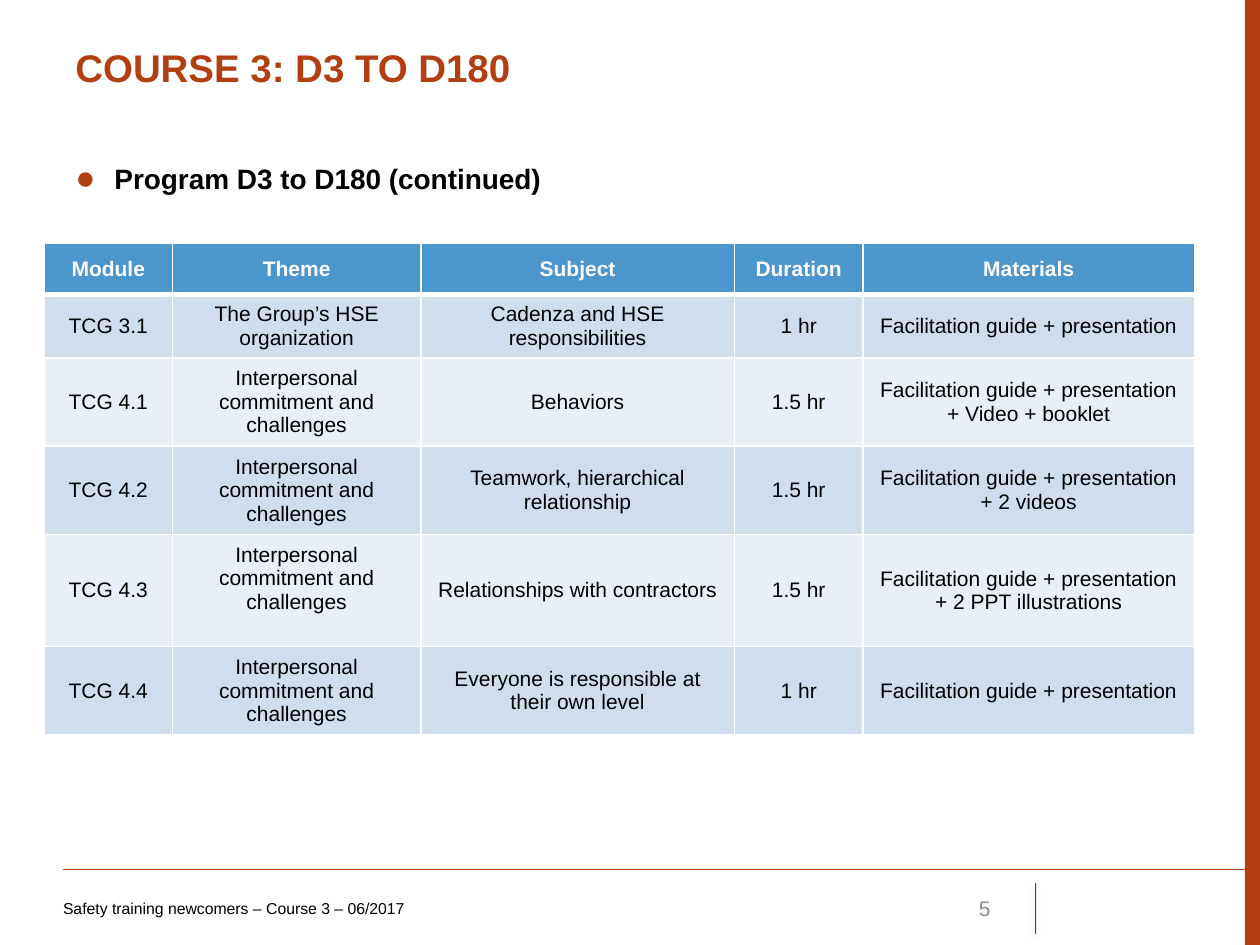
from pptx import Presentation
from pptx.dml.color import RGBColor
from pptx.enum.shapes import MSO_CONNECTOR, MSO_SHAPE
from pptx.enum.text import MSO_ANCHOR, PP_ALIGN
from pptx.oxml import parse_xml
from pptx.oxml.ns import nsdecls
from pptx.util import Inches, Pt

LEFT, CENTER, RIGHT = PP_ALIGN.LEFT, PP_ALIGN.CENTER, PP_ALIGN.RIGHT
TOP, MIDDLE = MSO_ANCHOR.TOP, MSO_ANCHOR.MIDDLE
NS = nsdecls("a")

# Content
TITLE = "COURSE 3: D3 TO D180"
HEADING = "Program D3 to D180 (continued)"
FOOTER = "Safety training newcomers – Course 3 – 06/2017"
PAGE = "5"
THEME4 = "Interpersonal commitment and challenges"
GUIDE = "Facilitation guide + presentation"
ROWS = [
    ("Module", "Theme", "Subject", "Duration", "Materials"),
    ("TCG 3.1", "The Group’s HSE organization",
     "Cadenza and HSE responsibilities", "1 hr", GUIDE),
    ("TCG 4.1", THEME4, "Behaviors", "1.5 hr", GUIDE + " + Video + booklet"),
    ("TCG 4.2", THEME4, "Teamwork, hierarchical relationship", "1.5 hr",
     GUIDE + " + 2 videos"),
    ("TCG 4.3", THEME4, "Relationships with contractors", "1.5 hr",
     GUIDE + " + 2 PPT illustrations"),
    ("TCG 4.4", THEME4, "Everyone is responsible at their own level", "1 hr",
     GUIDE),
]
WIDTHS = [1.02, 1.97, 2.49, 1.02, 2.63]
HEIGHTS = [0.41, 0.47, 0.66, 0.66, 0.85, 0.66]
RAISED = (4, 1)  # cell whose text sits one line higher

THEME = {
    "font": "Arial", "accent": "B23F12", "text": "000000", "white": "FFFFFF",
    "muted": "8C8C8C", "head": "4A96CD", "bands": ("E9EFF6", "D0DDED"),
    "title": 22, "heading": 16, "table": 12, "page": 12, "footer": 9,
}


def color(name):
    return RGBColor.from_string(THEME.get(name, name))


def write(frame, text, size, tint="text", bold=False, align=LEFT):
    """Put one formatted paragraph in a text frame."""
    frame.word_wrap = True
    para = frame.paragraphs[0]
    para.alignment = align
    run = para.add_run()
    run.text = text
    font = run.font
    font.name, font.size, font.bold = THEME["font"], Pt(THEME[size]), bold
    font.color.rgb = color(tint)
    return para


def add_text(slide, box, text, size, anchor=TOP, inset=0.1, **look):
    frame = slide.shapes.add_textbox(*map(Inches, box)).text_frame
    frame.vertical_anchor = anchor
    frame.margin_left = Inches(inset)
    return write(frame, text, size, **look)


def add_bullet(para):
    props = para._p.get_or_add_pPr()
    props.set("marL", str(Inches(0.31)))
    props.set("indent", str(Inches(-0.31)))
    for xml in (
        f'<a:buClr {NS}><a:srgbClr val="{THEME["accent"]}"/></a:buClr>',
        f'<a:buSzPct {NS} val="120000"/>',
        f'<a:buFont {NS} typeface="{THEME["font"]}"/>',
        f'<a:buChar {NS} char="●"/>',
    ):
        props.append(parse_xml(xml))


def add_line(slide, start, end, tint, width, shadow=""):
    line = slide.shapes.add_connector(
        MSO_CONNECTOR.STRAIGHT, *map(Inches, start + end))
    line.line.color.rgb = color(tint)
    line.line.width = Pt(width)
    line._element.spPr.append(
        parse_xml(f"<a:effectLst {NS}>{shadow}</a:effectLst>"))
    return line


def add_borders(cell, top, bottom):
    props = cell._tc.get_or_add_tcPr()
    for side, width in zip("LRTB", (1, 1, top, bottom)):
        props.append(parse_xml(
            f'<a:ln{side} {NS} w="{Pt(width)}"><a:solidFill>'
            f'<a:srgbClr val="{THEME["white"]}"/></a:solidFill></a:ln{side}>'))


def add_grid(slide):
    table = slide.shapes.add_table(
        len(ROWS), len(WIDTHS), Inches(0.35), Inches(1.93),
        Inches(sum(WIDTHS)), Inches(sum(HEIGHTS))).table
    for col, width in zip(table.columns, WIDTHS):
        col.width = Inches(width)
    for i, (row, height) in enumerate(zip(ROWS, HEIGHTS)):
        table.rows[i].height = Inches(height)
        head = i == 0
        for j, text in enumerate(row):
            cell = table.cell(i, j)
            cell.vertical_anchor = MIDDLE
            if (i, j) == RAISED:
                cell.margin_bottom = Inches(0.24)
            add_borders(cell, 3 if i == 1 else 1, 3 if head else 1)
            cell.fill.solid()
            cell.fill.fore_color.rgb = color(
                "head" if head else THEME["bands"][i % 2])
            write(cell.text_frame, text, "table", bold=head, align=CENTER,
                  tint="white" if head else "text")


def main():
    deck = Presentation()
    deck.slide_width, deck.slide_height = Inches(10), Inches(7.5)
    slide = deck.slides.add_slide(deck.slide_layouts[6])

    # Side band and footer rules
    band = slide.shapes.add_shape(
        MSO_SHAPE.RECTANGLE, *map(Inches, (9.88, 0, 0.12, 7.5)))
    band.shadow.inherit = False
    band.fill.solid()
    band.fill.fore_color.rgb = color("accent")
    band.line.fill.background()
    add_line(slide, (0.5, 6.9), (10, 6.9), "accent", 0.75)
    mark = add_line(
        slide, (8.22, 7.01), (8.22, 7.41), "text", 0.5,
        f'<a:outerShdw blurRad="{Pt(3.1)}" dist="{Pt(1.6)}" dir="5400000">'
        '<a:srgbClr val="000000"><a:alpha val="38000"/></a:srgbClr>'
        '</a:outerShdw>')
    for tone in mark.line._ln.iter("{*}srgbClr"):
        tone.append(parse_xml(f'<a:alpha {NS} val="70000"/>'))

    # Title, footer and heading
    add_text(slide, (0.5, 0.3, 8.99, 0.69), TITLE, "title",
             tint="accent", bold=True)
    add_text(slide, (0.5, 7.01, 6.08, 0.4), FOOTER, "footer",
             anchor=MIDDLE, inset=0)
    add_text(slide, (7.17, 7.01, 0.79, 0.4), PAGE, "page",
             anchor=MIDDLE, tint="muted", align=RIGHT)
    para = add_text(slide, (0.5, 1.23, 8.99, 0.47), HEADING, "heading",
                    bold=True)
    add_bullet(para)

    # Program table
    add_grid(slide)
    deck.save("out.pptx")


if __name__ == "__main__":
    main()
